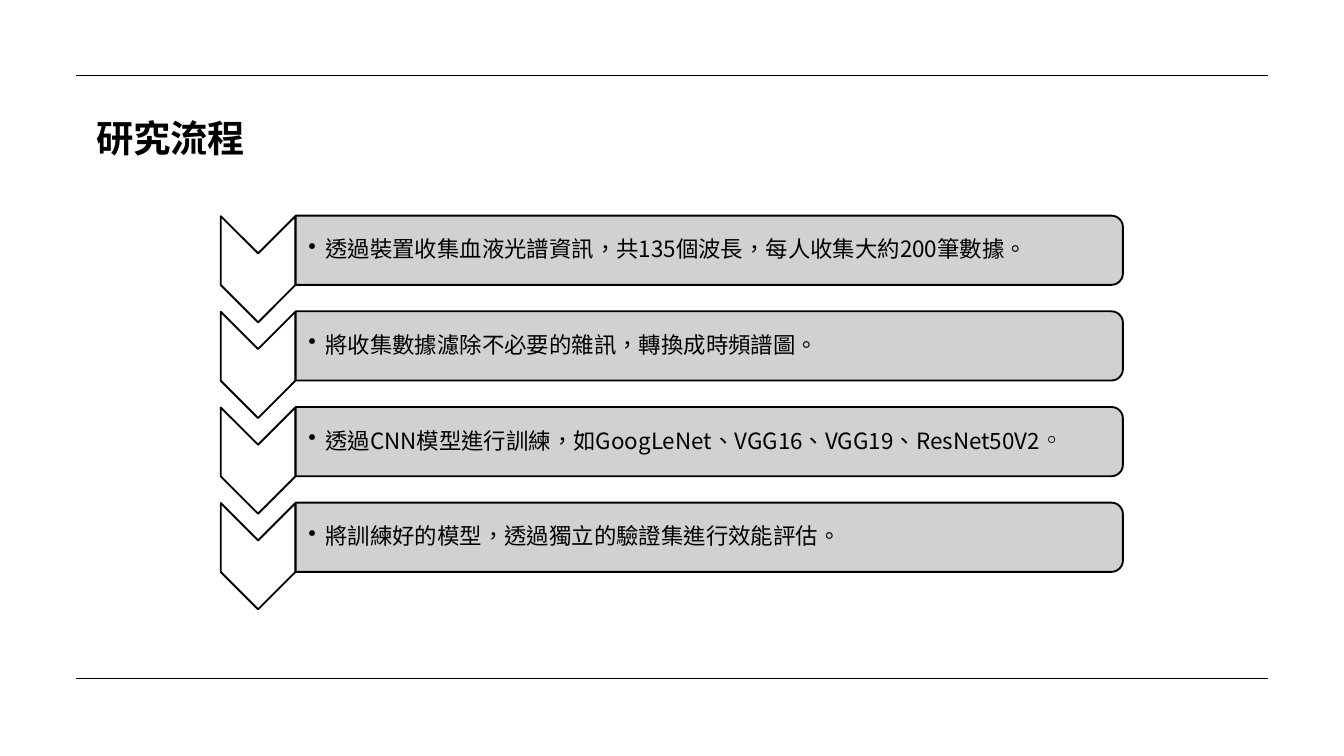
import dataclasses

import lxml.etree
import pptx
import pptx.dml.color
import pptx.enum.shapes
import pptx.enum.text
import pptx.oxml.ns
import pptx.util

Pt = pptx.util.Pt
qn = pptx.oxml.ns.qn
KIND = pptx.enum.shapes.MSO_SHAPE
ALIGN = pptx.enum.text.PP_ALIGN
FONT = "Noto Sans CJK SC"
HUES = {"ink": "000000", "arrow": "FFFFFF", "bar": "CCCCCC"}
PITCH = 102.5


@dataclasses.dataclass
class Piece:
    text: str
    size: float = 24
    font: str = FONT


@dataclasses.dataclass
class Box:
    left: float
    top: float
    width: float
    height: float

    def lower(self, gap: float) -> "Box":
        return dataclasses.replace(self, top=self.top + gap)

    def area(self) -> list:
        return [Pt(n) for n in (self.left, self.top, self.width, self.height)]


# Frames of the first step, before the quarter turn
ARROW = Box(219.6, 248.5, 113.8, 79.9)
BAR = Box(722.9, -175, 74.2, 886.3)
NOTE = Box(316.8, 234.7, 882.7, 67)

STEPS = [
    [Piece("透過裝置收集血液光譜資訊，共135個波長，每人收集大約200筆數據"),
     Piece("。", font="Calibri")],
    [Piece("將收集數據濾除不必要的雜訊，轉換成時頻譜圖。")],
    [Piece("透過CNN模型進行訓練，如GoogLeNet、VGG16、VGG19、ResNet50V2"),
     Piece("。", 27, "Times New Roman")],
    [Piece("將訓練好的模型，透過獨立的驗證集進行效能評估。")],
]


def tint(name: str) -> pptx.dml.color.RGBColor:
    return pptx.dml.color.RGBColor.from_string(HUES[name])


def style(run, piece: Piece, bold: bool = False) -> None:
    font = run.font
    font.name, font.size, font.bold = piece.font, Pt(piece.size), bold
    font.color.rgb = tint("ink")
    props = run._r.get_or_add_rPr()
    props.set("lang", "zh-TW")
    east = lxml.etree.Element(qn("a:ea"), typeface=piece.font)
    props.find(qn("a:latin")).addnext(east)


def rule(slide, top: float) -> None:
    line = slide.shapes.add_connector(
        pptx.enum.shapes.MSO_CONNECTOR.STRAIGHT,
        Pt(81), Pt(top), Pt(1359), Pt(top))
    line.line.color.rgb = tint("ink")
    line.line.width = Pt(1.5)
    lxml.etree.SubElement(line._element.spPr, qn("a:effectLst"))


def block(slide, kind, box: Box, hue: str):
    shape = slide.shapes.add_shape(kind, *box.area())
    shape.rotation = 90
    shape.shadow.inherit = False
    shape.fill.solid()
    shape.fill.fore_color.rgb = tint(hue)
    shape.line.color.rgb = tint("ink")
    shape.line.width = Pt(2)
    return shape


def label(slide, box: Box, pad: tuple):
    frame = slide.shapes.add_textbox(*box.area()).text_frame
    frame.word_wrap = True
    frame.margin_left, frame.margin_top, frame.margin_right, \
        frame.margin_bottom = [Pt(n) for n in pad]
    return frame


def bullet(slide, box: Box, pieces: list[Piece]) -> None:
    frame = label(slide, box, (13.7, 1.4, 1.4, 1.4))
    frame.vertical_anchor = pptx.enum.text.MSO_ANCHOR.MIDDLE
    para = frame.paragraphs[0]
    para.line_spacing = 0.9
    para.space_after = Pt(3.6)
    props = para._p.get_or_add_pPr()
    props.set("marL", str(Pt(18)))
    props.set("indent", str(Pt(-18)))
    lxml.etree.SubElement(props, qn("a:buChar"), char="•")
    for piece in pieces:
        run = para.add_run()
        run.text = piece.text
        style(run, piece)


def main() -> None:
    deck = pptx.Presentation()
    deck.slide_width, deck.slide_height = Pt(1440), Pt(810)
    slide = deck.slides.add_slide(deck.slide_layouts[6])

    # Rules at the top and foot
    for top in (81, 727.2):
        rule(slide, top)

    # Title
    title = Piece("研究流程", 40)
    frame = label(slide, Box(90, 99.4, 185.8, 64.8), (0, 0, 0, 0))
    frame.text = title.text
    para = frame.paragraphs[0]
    para.alignment = ALIGN.CENTER
    para.line_spacing = 1.5
    style(para.runs[0], title, bold=True)

    # Steps: arrow, bar and text
    for row, pieces in enumerate(STEPS):
        gap = row * PITCH
        block(slide, KIND.CHEVRON, ARROW.lower(gap), "arrow")
        bar = block(slide, KIND.ROUND_2_SAME_RECTANGLE, BAR.lower(gap), "bar")
        shade = bar._element.spPr.find(qn("a:solidFill"))[0]
        lxml.etree.SubElement(shade, qn("a:alpha"), val="90000")
        bullet(slide, NOTE.lower(gap), pieces)

    deck.save("out.pptx")


if __name__ == "__main__":
    main()
